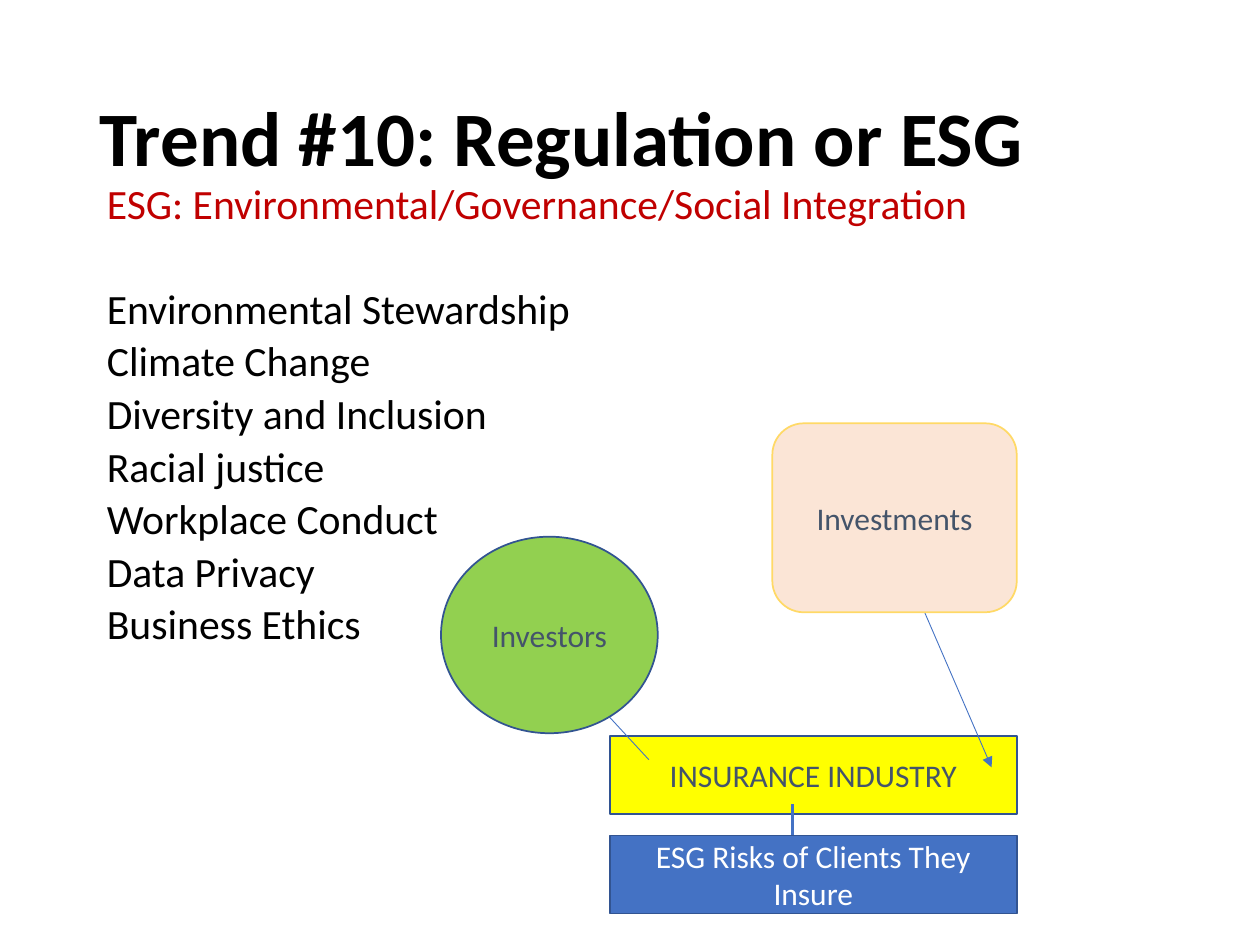
import dataclasses

import pptx
import pptx.dml.color
import pptx.enum.shapes
import pptx.enum.text
import pptx.oxml
import pptx.oxml.ns
import pptx.util
from pptx.util import Inches

SHAPES = pptx.enum.shapes.MSO_SHAPE
ALIGN = pptx.enum.text.PP_ALIGN
ANCHOR = pptx.enum.text.MSO_ANCHOR


@dataclasses.dataclass(frozen=True)
class Theme:
    font: str = "Calibri"
    black: str = "000000"
    white: str = "FFFFFF"
    red: str = "C00000"
    slate: str = "44546A"
    blue: str = "4472C4"
    outline: str = "325491"
    yellow: str = "FFFF00"
    green: str = "92D050"
    peach: str = "FBE5D6"
    gold: str = "FFD966"
    title_size: float = 44
    body_size: float = 23.8
    label_size: float = 18


THEME = Theme()
SUBTITLE = "ESG: Environmental/Governance/Social Integration"
TOPICS = [
    "Environmental Stewardship",
    "Climate Change",
    "Diversity and Inclusion",
    "Racial justice",
    "Workplace Conduct",
    "Data Privacy",
    "Business Ethics",
]


def rgb(value):
    return pptx.dml.color.RGBColor.from_string(value)


def set_attributes(target, values):
    for name, value in values.items():
        setattr(target, name, value)


def write_paragraph(paragraph, text, size, color, bold=False, **layout):
    run = paragraph.add_run()
    run.text = text
    set_attributes(run.font, {"name": THEME.font, "size": pptx.util.Pt(size), "bold": bold})
    run.font.color.rgb = rgb(color)
    set_attributes(paragraph, layout)


def add_title(slide, text):
    title = slide.shapes.title
    set_attributes(title, {"left": Inches(0.69), "top": Inches(0.4),
                           "width": Inches(8.62), "height": Inches(1.45)})
    set_attributes(title.text_frame, {"vertical_anchor": ANCHOR.MIDDLE, "word_wrap": True,
                                      "auto_size": pptx.enum.text.MSO_AUTO_SIZE.NONE})
    write_paragraph(title.text_frame.paragraphs[0], text, THEME.title_size, THEME.black,
                    bold=True, alignment=ALIGN.LEFT, line_spacing=0.9)


def add_topics(slide, heading, topics):
    box = slide.shapes.add_textbox(Inches(0.75), Inches(1.47), Inches(9.25), Inches(3.91))
    frame = box.text_frame
    frame.word_wrap = True
    write_paragraph(frame.paragraphs[0], heading, THEME.body_size, THEME.red,
                    line_spacing=0.7, space_before=pptx.util.Pt(10))
    for index, topic in enumerate(topics):
        gap = 10 if index else 40
        write_paragraph(frame.add_paragraph(), topic, THEME.body_size, THEME.black,
                        line_spacing=0.7, space_before=pptx.util.Pt(gap))


def add_node(slide, kind, bounds, text, fill, line=THEME.outline, color=THEME.slate):
    shape = slide.shapes.add_shape(kind, *map(Inches, bounds))
    shape.shadow.inherit = False
    shape.fill.solid()
    shape.fill.fore_color.rgb = rgb(fill)
    shape.line.color.rgb = rgb(line)
    shape.line.width = pptx.util.Pt(1)
    set_attributes(shape.text_frame, {"word_wrap": True, "vertical_anchor": ANCHOR.MIDDLE})
    write_paragraph(shape.text_frame.paragraphs[0], text, THEME.label_size, color,
                    alignment=ALIGN.CENTER)


def add_link(slide, start, end, width=0.5, arrows=False):
    link = slide.shapes.add_connector(pptx.enum.shapes.MSO_CONNECTOR.STRAIGHT,
                                      *map(Inches, (*start, *end)))
    link.line.color.rgb = rgb(THEME.blue)
    link.line.width = pptx.util.Pt(width)
    if arrows:
        line = link.line._get_or_add_ln()
        for tag in ("a:headEnd", "a:tailEnd"):
            end_mark = pptx.oxml.parse_xml(f'<{tag} {pptx.oxml.ns.nsdecls("a")} type="triangle"/>')
            line.append(end_mark)
    effects = pptx.oxml.parse_xml(f'<a:effectLst {pptx.oxml.ns.nsdecls("a")}/>')
    link._element.spPr.append(effects)


def main():
    presentation = pptx.Presentation()
    set_attributes(presentation, {"slide_width": Inches(10), "slide_height": Inches(7.5)})
    slide = presentation.slides.add_slide(presentation.slide_layouts[5])

    add_title(slide, "Trend #10: Regulation or ESG")
    add_topics(slide, SUBTITLE, TOPICS)

    add_node(slide, SHAPES.RECTANGLE, (4.84, 5.84, 3.23, 0.62), "INSURANCE INDUSTRY",
             THEME.yellow)
    add_link(slide, (4.55, 5.38), (5.15, 6.03))
    add_node(slide, SHAPES.OVAL, (3.5, 4.26, 1.72, 1.56), "Investors", THEME.green)
    add_link(slide, (6.79, 3.59), (7.87, 6.09), arrows=True)
    add_node(slide, SHAPES.ROUNDED_RECTANGLE, (6.13, 3.36, 1.94, 1.5), "Investments",
             THEME.peach, line=THEME.gold)
    add_link(slide, (6.29, 6.38), (6.29, 6.63), width=2.25)
    add_node(slide, SHAPES.FLOWCHART_PROCESS, (4.84, 6.63, 3.23, 0.62),
             "ESG Risks of Clients They Insure", THEME.blue, color=THEME.white)

    presentation.save("out.pptx")


if __name__ == "__main__":
    main()
